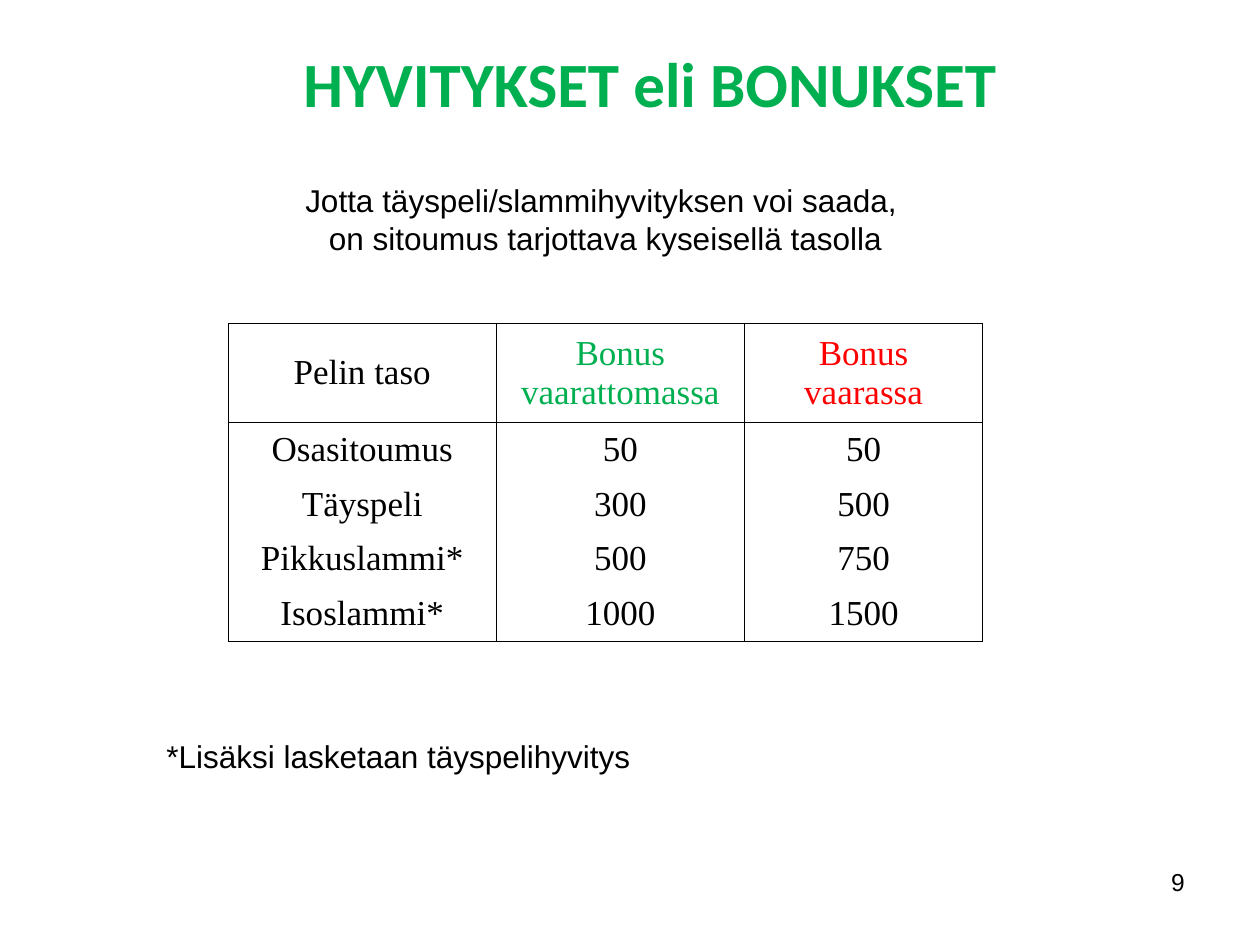
"""Build the bridge bonus slide: title, rule, bonus table, footnote and page number."""
from lxml import etree
from pptx import Presentation
from pptx import util as u
from pptx.dml.color import RGBColor
from pptx.enum import text
from pptx.oxml import ns

BLACK = RGBColor(0x00, 0x00, 0x00)
GREEN = RGBColor(0x00, 0xB0, 0x50)
RED = RGBColor(0xFF, 0x00, 0x00)
LEFT, CENTER, RIGHT = text.PP_ALIGN.LEFT, text.PP_ALIGN.CENTER, text.PP_ALIGN.RIGHT


class Deck:
    def __init__(self, width, height):
        self.prs = Presentation()
        self.prs.slide_width, self.prs.slide_height = u.Pt(width), u.Pt(height)
        self.body_font, self.title_font, self.table_font = "Arial", "Calibri", "Times New Roman"
        self.line_width = 0.5
        self.s = self.prs.slides.add_slide(self.prs.slide_layouts[5])

    def set_text(self, tf, content, font, size, color=BLACK, align=LEFT, bold=False):
        p = tf.paragraphs[0]
        p.text = content
        p.alignment = align
        for r in p.runs:
            r.font.name, r.font.size, r.font.bold = font, u.Pt(size), bold
            r.font.color.rgb = color

    def title(self, content, x, y, w, h):
        sp = self.s.shapes.title
        sp.left, sp.top, sp.width, sp.height = map(u.Pt, (x, y, w, h))
        tf = sp.text_frame
        tf.auto_size = text.MSO_AUTO_SIZE.NONE
        tf.vertical_anchor = text.MSO_ANCHOR.TOP
        self.set_text(tf, content, self.title_font, 36, GREEN, CENTER, True)

    def text_box(self, content, x, y, w, h, size=18, align=LEFT):
        tf = self.s.shapes.add_textbox(*map(u.Pt, (x, y, w, h))).text_frame
        tf.word_wrap = True
        self.set_text(tf, content, self.body_font, size, align=align)

    def border(self, cell, edges):
        tc_pr = cell._tc.get_or_add_tcPr()
        for i, edge in enumerate(("L", "R", "T", "B")):
            ln = etree.Element(ns.qn(f"a:ln{edge}"), w=str(u.Pt(self.line_width)))
            if edge in edges:
                fill = etree.SubElement(ln, ns.qn("a:solidFill"))
                etree.SubElement(fill, ns.qn("a:srgbClr"), val=str(BLACK))
            else:
                etree.SubElement(ln, ns.qn("a:noFill"))
            tc_pr.insert(i, ln)

    def table(self, rows, x, y, widths, heights, header_colors):
        frame = self.s.shapes.add_table(
            len(rows), len(widths), *map(u.Pt, (x, y, sum(widths), sum(heights))))
        table = frame.table
        table.first_row = table.horz_banding = False
        for column, width in zip(table.columns, widths):
            column.width = u.Pt(width)
        for i, (values, height) in enumerate(zip(rows, heights)):
            table.rows[i].height = u.Pt(height)
            edges = "LR" + ("T" if i < 2 else "") + ("B" if i in (0, len(rows) - 1) else "")
            for j, value in enumerate(values):
                cell = table.cell(i, j)
                cell.fill.background()
                cell.vertical_anchor = text.MSO_ANCHOR.MIDDLE
                color = header_colors[j] if i == 0 else BLACK
                self.set_text(cell.text_frame, value, self.table_font, 20, color, CENTER)
                self.border(cell, edges)


def main():
    deck = Deck(720, 540)
    deck.title("HYVITYKSET eli BONUKSET", 150.5, 22, 442, 51)
    rows = [
        ("Pelin taso", "Bonus vaarattomassa", "Bonus vaarassa"),
        ("Osasitoumus", "50", "50"),
        ("Täyspeli", "300", "500"),
        ("Pikkuslammi*", "500", "750"),
        ("Isoslammi*", "1000", "1500"),
    ]
    deck.table(rows, 130.5, 184.8, (153, 142, 136), (56.6,) + (31.25,) * 4,
               (BLACK, GREEN, RED))
    deck.text_box("Jotta täyspeli/slammihyvityksen voi saada, \non sitoumus tarjottava "
                  "kyseisellä tasolla", 60, 100, 572, 51, align=CENTER)
    deck.text_box("*Lisäksi lasketaan täyspelihyvitys", 88, 417.6, 567, 29)
    deck.text_box("9", 516, 492, 168, 37.5, size=14, align=RIGHT)
    deck.prs.save("out.pptx")


if __name__ == "__main__":
    main()
